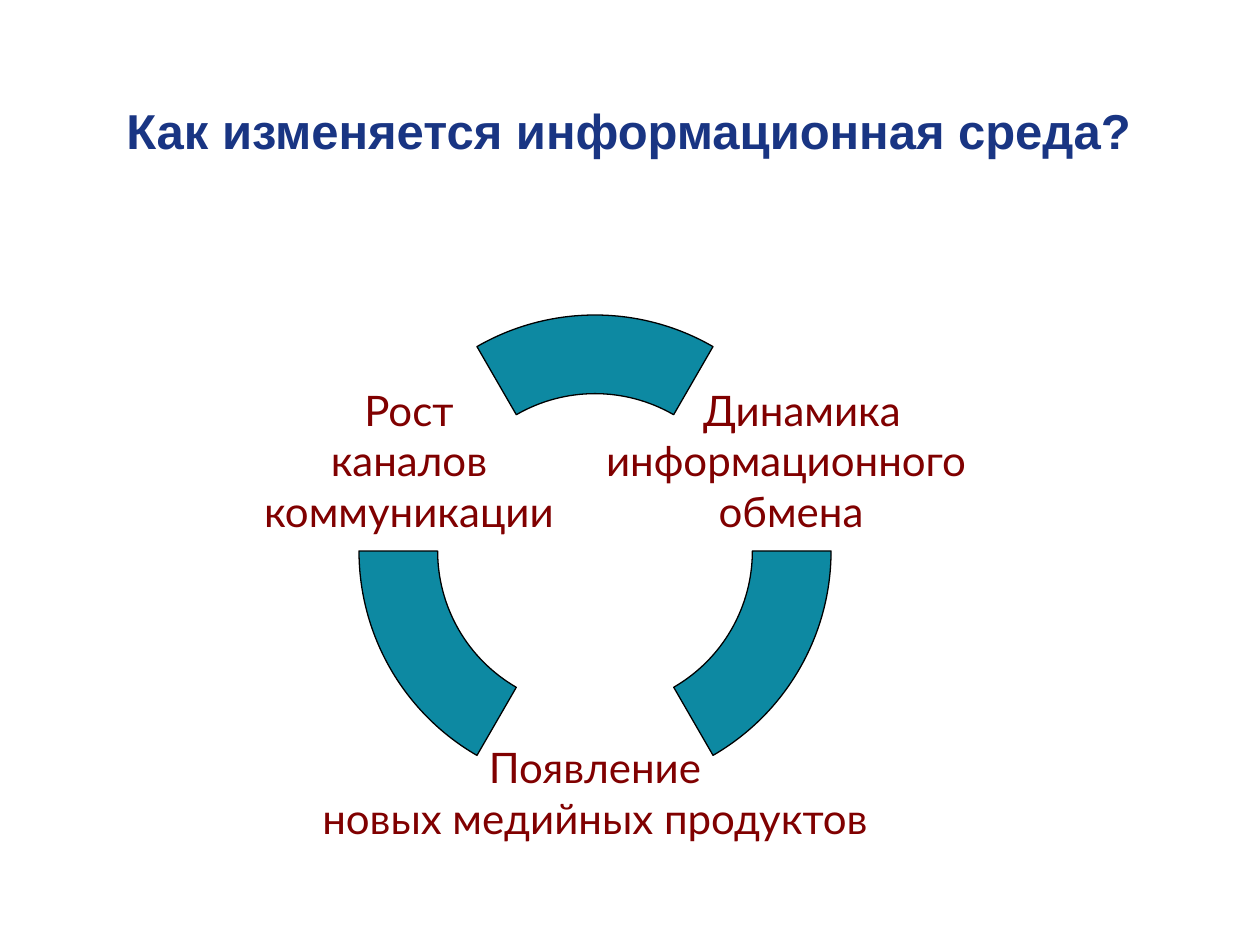
from pptx import Presentation
from pptx.dml.color import RGBColor
from pptx.enum.shapes import MSO_SHAPE as Preset
from pptx.enum.text import MSO_ANCHOR as Anchor, PP_ALIGN as Align
from pptx.util import Emu, Pt

SCALE = 914400 / 126  # EMU in one px
COLORS = {"title": "193583", "ring": "0D89A2", "outline": "000000", "label": "800000"}
TITLE_FONT = {"name": "Arial", "size": Pt(28), "bold": True}
LABEL_FONT = {"name": "Lato", "size": Pt(24), "bold": False}


def px(length):
    return Emu(round(length * SCALE))


def color(name):
    return RGBColor.from_string(COLORS[name])


class Deck:
    def __init__(self, width, height):
        self.presentation = Presentation()
        self.presentation.slide_width = px(width)
        self.presentation.slide_height = px(height)
        self.slide = self.presentation.slides.add_slide(self.presentation.slide_layouts[6])

    def text(self, lines, box, font, color_name):
        """Centred lines, each with a sideways shift in px."""
        frame = self.slide.shapes.add_textbox(*map(px, box)).text_frame
        frame.word_wrap = True
        frame.vertical_anchor = Anchor.MIDDLE
        for index, (line, shift) in enumerate(lines):
            paragraph = frame.paragraphs[0] if index == 0 else frame.add_paragraph()
            paragraph.text = line
            paragraph.alignment = Align.CENTER
            if shift:
                # An indent on one side moves a centred line by half its size
                side = "marL" if shift > 0 else "marR"
                paragraph._p.get_or_add_pPr().set(side, str(px(2 * abs(shift))))
            for key, value in font.items():
                setattr(paragraph.font, key, value)
            paragraph.font.color.rgb = color(color_name)

    def arc(self, box, start, end, thickness, rotation):
        segment = self.slide.shapes.add_shape(Preset.BLOCK_ARC, *map(px, box))
        # Angles are stored in 60000ths of a degree, adjustments in 100000ths
        for index, value in enumerate((start * 0.6, end * 0.6, thickness)):
            segment.adjustments[index] = value
        segment.rotation = rotation
        segment.shadow.inherit = False
        segment.fill.solid()
        segment.fill.fore_color.rgb = color("ring")
        segment.line.color.rgb = color("outline")
        segment.line.width = Pt(0.75)


def main():
    deck = Deck(1260, 945)

    # Title
    deck.text([("Как изменяется информационная среда?", 0)],
              (25, 29, 1207, 202), TITLE_FONT, "title")

    # Ring of three segments, each spanning 60 degrees
    for rotation in (0, 120, 240):
        deck.arc((359, 315, 472, 472), 240, 300, 1 / 6, rotation)

    # Labels in the gaps of the ring: centre, top, width, lines
    labels = [
        (786, 388, 420, [("Динамика", 16), ("информационного", 0), ("обмена", 5)]),
        (595, 720, 600, [("Появление", 0), ("новых медийных продуктов", 0)]),
        (415, 388, 340, [("Рост", -6), ("каналов", -6), ("коммуникации", 0)]),
    ]
    for center, top, width, lines in labels:
        deck.text(lines, (center - width // 2, top, width, 144), LABEL_FONT, "label")

    deck.presentation.save("out.pptx")


if __name__ == "__main__":
    main()
